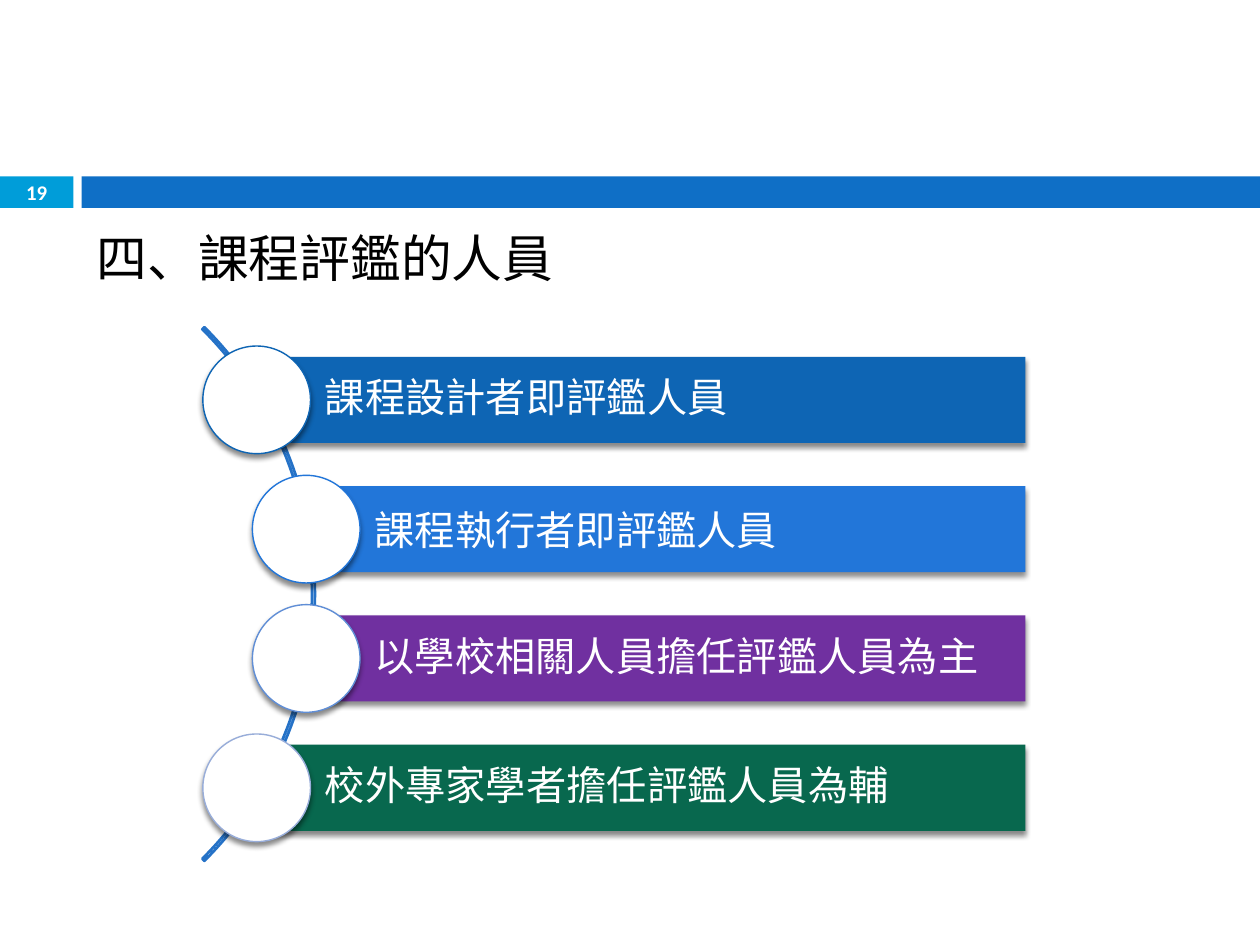
from dataclasses import dataclass
from typing import Optional

from lxml.etree import SubElement
from pptx import Presentation
from pptx.dml.color import RGBColor as Rgb
from pptx.enum.shapes import MSO_SHAPE as Kind
from pptx.enum.text import MSO_ANCHOR as Anchor, MSO_AUTO_SIZE as Fit, PP_ALIGN as Align
from pptx.oxml.ns import qn
from pptx.util import Pt


@dataclass(frozen=True)
class Theme:
    font: str = "Calibri"
    ink: str = "000000"
    white: str = "FFFFFF"
    cyan: str = "009DD9"
    blue: str = "0F6FC6"
    arc: str = "2572C7"
    head: float = 29
    body: float = 23
    small: float = 11.9


@dataclass(frozen=True)
class Row:
    text: str
    left: float
    fill: str
    ring: str
    lead: float = 0.9


@dataclass(frozen=True)
class Box:
    left: float
    top: float
    width: float
    height: float

    def points(self) -> tuple:
        return Pt(self.left), Pt(self.top), Pt(self.width), Pt(self.height)


LOOK = Theme()
OUTER, INNER = 146.7, 175
ROWS = (
    Row("課程設計者即評鑑人員", OUTER, "0E65B4", "0E65B4"),
    Row("課程執行者即評鑑人員", INNER, "2276D9", "2276D9", 1),
    Row("以學校相關人員擔任評鑑人員為主", INNER, "7030A0", "608ED6"),
    Row("校外專家學者擔任評鑑人員為輔", OUTER, "08684E", "98ADD9"),
)
FIRST, PITCH = 228.5, 73.9
RIGHT, THICK, DISC = 586, 49.2, 61.5


def write(shape, text: str, *, size: float, color: str = LOOK.white, bold: bool = False,
          align=Align.LEFT, anchor=Anchor.MIDDLE, lead: float = 1, before: float = 0,
          inset: tuple = (7.2, 3.6, 7.2, 3.6)) -> None:
    frame = shape.text_frame
    frame.word_wrap = True
    frame.auto_size = Fit.NONE
    frame.vertical_anchor = anchor
    (frame.margin_left, frame.margin_top,
     frame.margin_right, frame.margin_bottom) = map(Pt, inset)
    para = frame.paragraphs[0]
    para.alignment = align
    para.line_spacing = lead
    para.space_before = Pt(before)
    run = para.add_run()
    run.text = text
    font = run.font
    font.name, font.size, font.bold = LOOK.font, Pt(size), bold
    font.color.rgb = Rgb.from_string(color)


def draw(slide, kind, box: Box, fill: Optional[str] = None,
         line: Optional[str] = None, width: float = 0.79):
    shape = slide.shapes.add_shape(kind, *box.points())
    shape.shadow.inherit = False
    if fill:
        shape.fill.solid()
        shape.fill.fore_color.rgb = Rgb.from_string(fill)
    else:
        shape.fill.background()
    if line:
        shape.line.color.rgb = Rgb.from_string(line)
        shape.line.width = Pt(width)
    else:
        shape.line.fill.background()
    return shape


def shade(shape) -> None:
    host = shape._element.spPr.find(qn("a:effectLst"))
    cast = SubElement(host, qn("a:outerShdw"), blurRad=str(Pt(3)), dist=str(Pt(2.4)),
                      dir="5400000", rotWithShape="0")
    tint = SubElement(cast, qn("a:srgbClr"), val=LOOK.ink)
    SubElement(tint, qn("a:alpha"), val="45000")


def place(slide, row: Row, mid: float) -> None:
    bar = draw(slide, Kind.RECTANGLE,
               Box(row.left, mid - THICK / 2, RIGHT - row.left, THICK), row.fill)
    shade(bar)
    write(bar, row.text, size=LOOK.body, lead=row.lead, inset=(39, 4.5, 4.5, 4.5))
    disc = draw(slide, Kind.OVAL, Box(row.left - DISC / 2, mid - DISC / 2, DISC, DISC),
                LOOK.white, row.ring)
    shade(disc)


def main() -> None:
    """Build the slide on the people who evaluate a curriculum."""
    deck = Presentation()
    deck.slide_width, deck.slide_height = Pt(720), Pt(540)
    slide = deck.slides.add_slide(deck.slide_layouts[5])

    title = slide.shapes.title
    title.left, title.top, title.width, title.height = Box(48, 126, 642, 354).points()
    write(title, "四、課程評鑑的人員", size=LOOK.head, color=LOOK.ink,
          anchor=Anchor.TOP, before=7)

    badge = draw(slide, Kind.RECTANGLE, Box(0, 100.8, 42, 18), LOOK.cyan)
    write(badge, "19", size=LOOK.small, bold=True, align=Align.CENTER)
    draw(slide, Kind.RECTANGLE, Box(46.6, 100.8, 673.4, 18), LOOK.blue)

    arc = draw(slide, Kind.BLOCK_ARC, Box(-251.3, 123.8, 431.3, 431.3),
               line=LOOK.arc, width=1.5)
    for spot, value in enumerate((189, 27, 0.004)):
        arc.adjustments[spot] = value

    for step, row in enumerate(ROWS):
        place(slide, row, FIRST + step * PITCH)

    deck.save("out.pptx")


if __name__ == "__main__":
    main()
